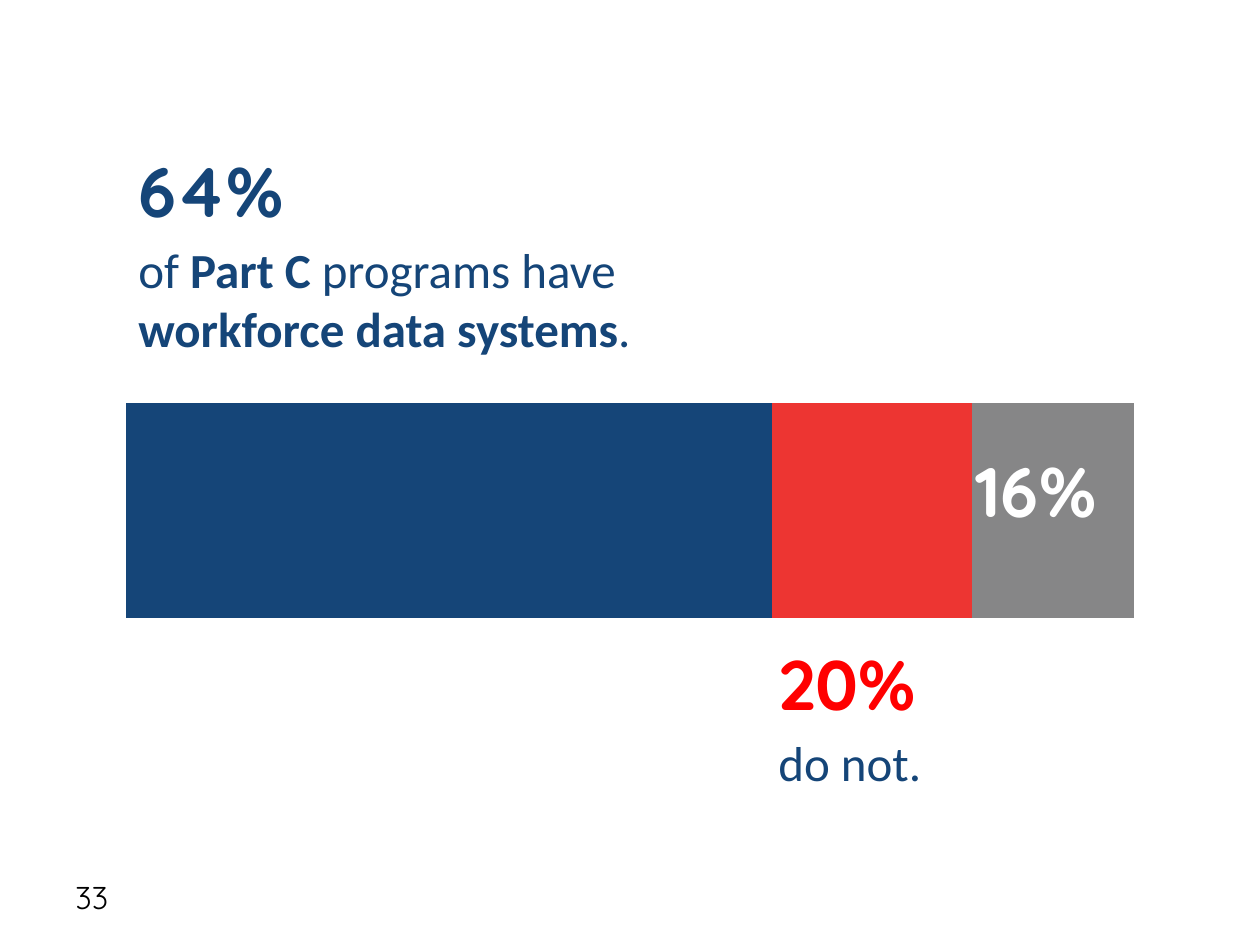
from dataclasses import dataclass

from lxml import etree
from pptx import Presentation, util as u
from pptx.chart import data as cd
from pptx.dml.color import RGBColor
from pptx.enum import chart as ch, text as tx
from pptx.oxml import ns


@dataclass(frozen=True)
class Theme:
    navy: str = "154578"
    red: str = "ED3532"
    gray: str = "868687"
    alert: str = "FF0000"
    white: str = "FFFFFF"
    black: str = "000000"
    body: str = "Calibri"
    head: str = "Quicksand"
    small: int = 18
    mid: int = 28
    big: int = 40


@dataclass(frozen=True)
class Box:
    left: int
    top: int
    width: int
    height: int


@dataclass(frozen=True)
class Run:
    words: str
    bold: bool = False


@dataclass(frozen=True)
class Label:
    box: Box
    runs: tuple[Run, ...]
    face: str
    size: int
    color: str
    anchor: tx.MSO_ANCHOR = tx.MSO_ANCHOR.TOP


@dataclass(frozen=True)
class Part:
    name: str
    value: int
    color: str


LOOK = Theme()
SCALE = 914400 / 126


def px(n: int) -> u.Emu:
    return u.Emu(round(n * SCALE))


def place(box: Box) -> tuple[u.Emu, ...]:
    return px(box.left), px(box.top), px(box.width), px(box.height)


def apply(item, form: dict) -> None:
    for key, value in form.items():
        setattr(item, key, value)


def style(font, face: str, size: int, color: str, bold: bool = False) -> None:
    apply(font, {"name": face, "size": u.Pt(size), "bold": bold})
    font.color.rgb = RGBColor.from_string(color)


def write(slide, label: Label) -> None:
    frame = slide.shapes.add_textbox(*place(label.box)).text_frame
    apply(frame, {"word_wrap": True, "vertical_anchor": label.anchor})
    para = frame.paragraphs[0]
    for run in label.runs:
        piece = para.add_run()
        piece.text = run.words
        style(piece.font, label.face, label.size, label.color, run.bold)


def figure(box: Box, words: str, color: str) -> Label:
    return Label(box, (Run(words, True),), LOOK.head, LOOK.big, color)


def fit(chart, edge: float) -> None:
    area = chart._chartSpace.chart.plotArea
    for old in area.findall(ns.qn("c:layout")):
        area.remove(old)
    layout = etree.Element(ns.qn("c:layout"))
    manual = etree.SubElement(layout, ns.qn("c:manualLayout"))
    span = round(1 - 2 * edge, 2)
    rules = {"layoutTarget": "inner", "xMode": "edge", "yMode": "edge",
             "x": edge, "y": edge, "w": span, "h": span}
    for key, value in rules.items():
        etree.SubElement(manual, ns.qn(f"c:{key}")).set("val", str(value))
    area.insert(0, layout)


def stack(slide, box: Box, parts: tuple[Part, ...]) -> None:
    data = cd.CategoryChartData()
    data.categories = ["1"]
    for part in parts:
        data.add_series(part.name, [part.value])
    kind = ch.XL_CHART_TYPE.BAR_STACKED
    chart = slide.shapes.add_chart(kind, *place(box), data).chart
    apply(chart, {"has_legend": False, "has_title": False})
    style(chart.font, LOOK.body, LOOK.small, LOOK.black)
    total = sum(part.value for part in parts)
    apply(chart.value_axis, {"minimum_scale": 0, "maximum_scale": total,
                             "major_unit": 31, "visible": False,
                             "has_major_gridlines": False})
    chart.value_axis.tick_labels.number_format = "0%"
    chart.value_axis.tick_labels.number_format_is_linked = False
    chart.category_axis.visible = False
    plot = chart.plots[0]
    apply(plot, {"gap_width": 150, "overlap": 100, "vary_by_categories": False})
    for series, part in zip(plot.series, parts):
        series.format.fill.solid()
        series.format.fill.fore_color.rgb = RGBColor.from_string(part.color)
    fit(chart, 0.02)


PARTS = (
    Part("Series 1", 100, LOOK.navy),
    Part("Series 2", 31, LOOK.red),
    Part("Series 3", 25, LOOK.gray),
)
LABELS = (
    Label(Box(63, 872, 294, 50), (Run("33"),), LOOK.head, LOOK.small,
          LOOK.black, tx.MSO_ANCHOR.MIDDLE),
    figure(Box(126, 141, 609, 97), "64%", LOOK.navy),
    Label(Box(126, 233, 559, 131),
          (Run("of "), Run("Part C", True), Run(" programs have "),
           Run("workforce data systems", True), Run(".")),
          LOOK.body, LOOK.mid, LOOK.navy),
    figure(Box(766, 634, 609, 97), "20%", LOOK.alert),
    Label(Box(766, 726, 559, 72), (Run("do not."),),
          LOOK.body, LOOK.mid, LOOK.navy),
    figure(Box(963, 441, 168, 97), "16%", LOOK.white),
)


def main() -> None:
    deck = Presentation()
    apply(deck, {"slide_width": px(1260), "slide_height": px(945)})
    slide = deck.slides.add_slide(deck.slide_layouts[6])
    stack(slide, Box(105, 231, 1050, 560), PARTS)
    for label in LABELS:
        write(slide, label)
    deck.save("out.pptx")


if __name__ == "__main__":
    main()
